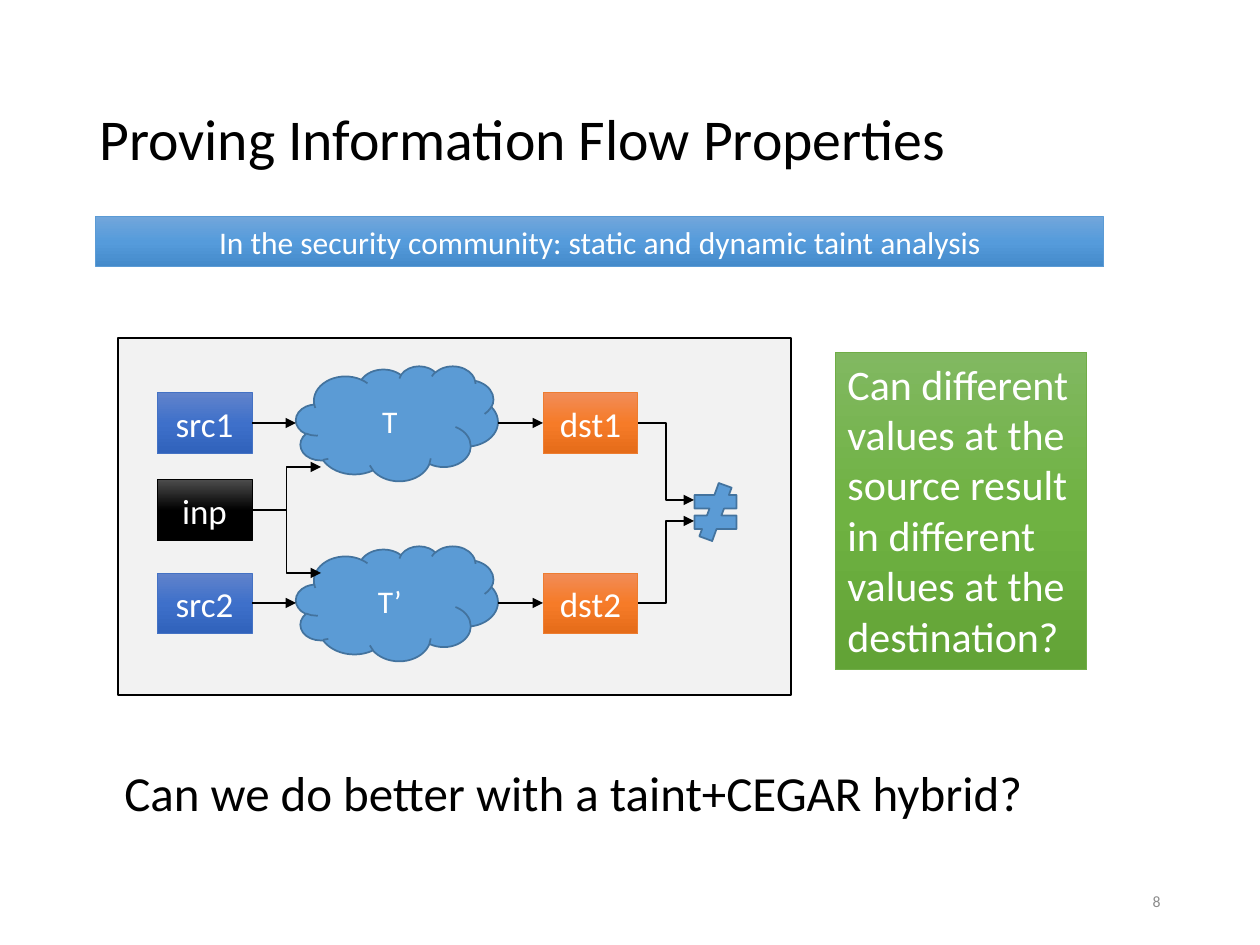
from copy import deepcopy

from lxml import etree
from pptx import Presentation
from pptx.dml.color import RGBColor
from pptx.enum.shapes import MSO_CONNECTOR, MSO_SHAPE
from pptx.enum.text import MSO_ANCHOR, PP_ALIGN
from pptx.oxml.ns import qn
from pptx.util import Pt

EMU_PER_PX = 914400 / 126
RECT = MSO_SHAPE.RECTANGLE
CLOUD = MSO_SHAPE.CLOUD
NOT_EQUAL = MSO_SHAPE.MATH_NOT_EQUAL
STRAIGHT = MSO_CONNECTOR.STRAIGHT
ELBOW = MSO_CONNECTOR.ELBOW
LEFT, CENTER, RIGHT = PP_ALIGN.LEFT, PP_ALIGN.CENTER, PP_ALIGN.RIGHT
TOP, MIDDLE = MSO_ANCHOR.TOP, MSO_ANCHOR.MIDDLE

FONT = "Calibri"
BLACK, WHITE, GRAY, PANEL = "000000", "FFFFFF", "8C8C8C", "F2F2F2"
SKY, SKY_EDGE = "5B9BD5", "43739E"
BLUE_STYLE = (("6183CB", "3E70CA", "3062BB"), "4472C4")
ORANGE_STYLE = (("F18C57", "F67B28", "E56C19"), "ED7D31")
BLACK_STYLE = (("4B4B4B", BLACK, BLACK), BLACK)
GREEN_STYLE = (("81B861", "6FB242", "62A336"), "70AD47")
SKY_STYLE = (("71A6DB", "559BDB", "448ACA"), SKY)

NODE_W, NODE_H = 95, 61
SRC_X, DST_X = 157, 543
CLOUD_X, CLOUD_W, CLOUD_H = 296, 202, 115
INP_Y = 480


def px(length):
    return round(length * EMU_PER_PX)


def color(value):
    return RGBColor.from_string(value)


def write(shape, text, size, ink, align=LEFT, anchor=TOP, spacing=None):
    frame = shape.text_frame
    frame.word_wrap = True
    frame.vertical_anchor = anchor
    para = frame.paragraphs[0]
    para.text = text
    para.alignment = align
    para.line_spacing = spacing
    para.font.name = FONT
    para.font.size = Pt(size)
    para.font.color.rgb = color(ink)


def add_text(page, area, text, size, ink, **layout):
    box = page.shapes.add_textbox(*map(px, area))
    write(box, text, size, ink, **layout)


def add_shape(page, kind, area, edge, width=1):
    shape = page.shapes.add_shape(kind, *map(px, area))
    shape.shadow.inherit = False
    shape.line.color.rgb = color(edge)
    shape.line.width = Pt(width)
    return shape


def add_solid(page, kind, area, fill, edge):
    shape = add_shape(page, kind, area, edge)
    shape.fill.solid()
    shape.fill.fore_color.rgb = color(fill)
    return shape


def add_gradient_box(page, area, style, text, size, **layout):
    shades, edge = style
    box = add_shape(page, RECT, area, edge, 0.5)
    box.fill.gradient()
    box.fill.gradient_angle = 270
    stop_list = box._element.spPr.find(qn("a:gradFill")).find(qn("a:gsLst"))
    stop_list.insert(1, deepcopy(stop_list[0]))
    for stop, shade, position in zip(box.fill.gradient_stops, shades, (0, 0.5, 1)):
        stop.color.rgb = color(shade)
        stop.position = position
    write(box, text, size, WHITE, **layout)


def add_node(page, x, y, style, label):
    add_gradient_box(page, (x, y, NODE_W, NODE_H), style, label, 20,
                     align=CENTER, anchor=MIDDLE)


def add_arrow(page, kind, start, end):
    arrow = page.shapes.add_connector(kind, *map(px, start + end))
    arrow.line.color.rgb = color(BLACK)
    arrow.line.width = Pt(1)
    properties = arrow._element.spPr
    etree.SubElement(properties.find(qn("a:ln")), qn("a:tailEnd"), type="triangle")
    etree.SubElement(properties, qn("a:effectLst"))


def add_run(page, number, node_y, cloud_label, input_end, result_y):
    middle = node_y + NODE_H // 2
    add_node(page, SRC_X, node_y, BLUE_STYLE, f"src{number}")
    add_node(page, DST_X, node_y, ORANGE_STYLE, f"dst{number}")
    cloud = add_solid(page, CLOUD, (CLOUD_X, node_y - 27, CLOUD_W, CLOUD_H), SKY, SKY_EDGE)
    write(cloud, cloud_label, 18, WHITE, align=CENTER, anchor=MIDDLE)
    src_right, dst_right = SRC_X + NODE_W, DST_X + NODE_W
    add_arrow(page, STRAIGHT, (src_right, middle), (CLOUD_X, middle))
    add_arrow(page, STRAIGHT, (CLOUD_X + CLOUD_W, middle), (DST_X, middle))
    add_arrow(page, ELBOW, (src_right, INP_Y + NODE_H // 2), input_end)
    add_arrow(page, ELBOW, (dst_right, middle), (694, result_y))


def main():
    deck = Presentation()
    deck.slide_width, deck.slide_height = px(1260), px(945)
    page = deck.slides.add_slide(deck.slide_layouts[6])

    add_text(page, (87, 50, 1086, 183), "Proving Information Flow Properties",
             33, BLACK, anchor=MIDDLE, spacing=0.9)
    add_text(page, (890, 876, 283, 50), "8", 9, GRAY, align=RIGHT, anchor=MIDDLE)
    add_gradient_box(page, (96, 217, 1008, 50), SKY_STYLE,
                     "In the security community: static and dynamic taint analysis",
                     18, align=CENTER)

    add_solid(page, RECT, (118, 338, 673, 357), PANEL, BLACK)
    add_solid(page, NOT_EQUAL, (687, 483, 57, 58), SKY, SKY_EDGE)
    add_node(page, SRC_X, INP_Y, BLACK_STYLE, "inp")
    add_run(page, 1, 393, "T", (321, 467), 500)
    add_run(page, 2, 573, "T’", (321, 573), 521)

    add_gradient_box(page, (835, 352, 252, 318), GREEN_STYLE,
                     "Can different values at the source result in different "
                     "values at the destination?", 24)
    add_text(page, (112, 756, 977, 72), "Can we do better with a taint+CEGAR hybrid?",
             28, BLACK)
    deck.save("out.pptx")


if __name__ == "__main__":
    main()
